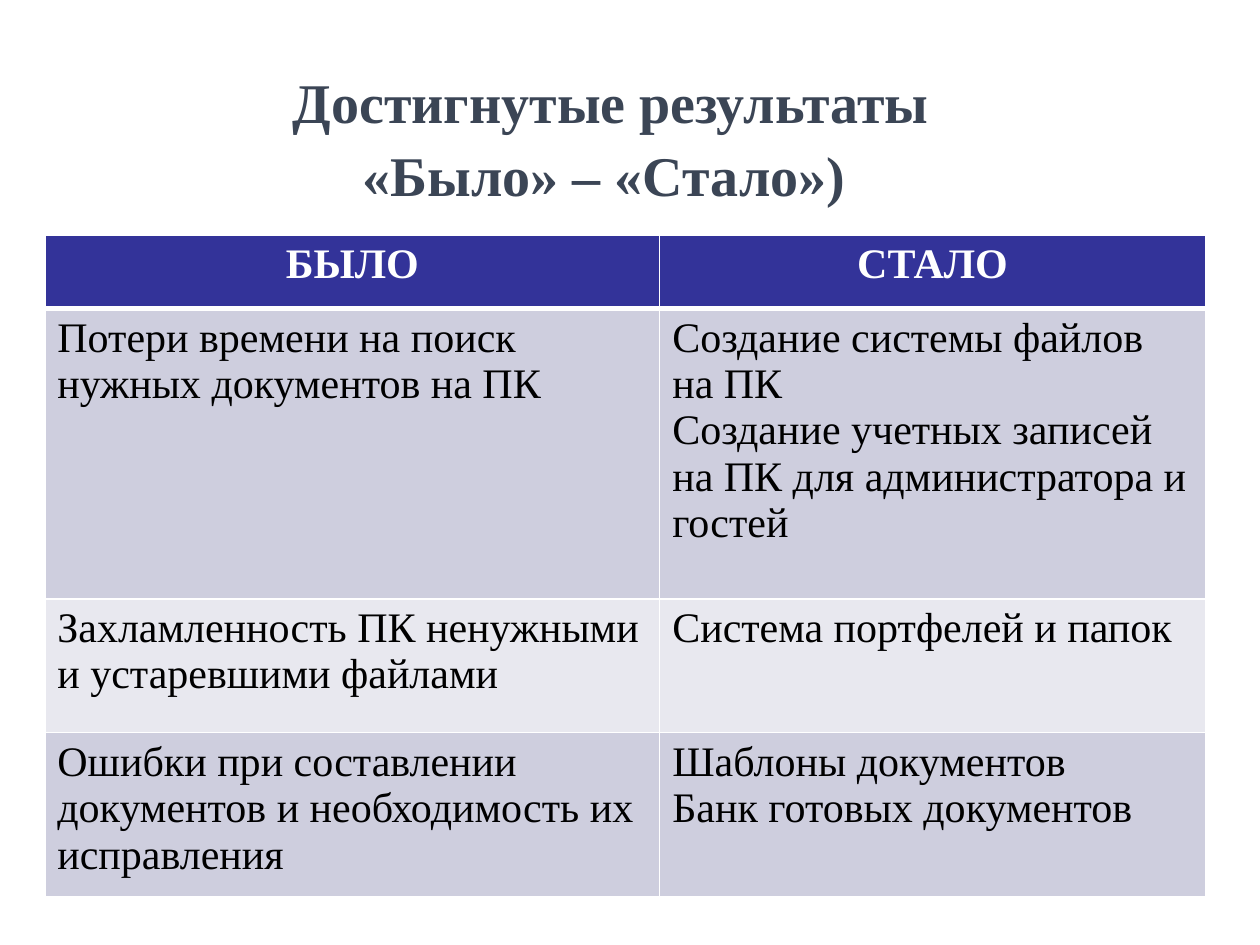
from lxml.etree import SubElement
from pptx import Presentation
from pptx.dml.color import RGBColor
from pptx.enum.text import PP_ALIGN as Align
from pptx.oxml.ns import qn
from pptx.util import Pt

FONT = "Times New Roman"
COLORS = {
    "title": "3B4555",
    "header": "333399",
    "band_dark": "CECEDE",
    "band_light": "E8E8EF",
    "text": "000000",
    "white": "FFFFFF",
}
TITLE_LINES = ["Достигнутые результаты", "«Было» – «Стало») "]
COLUMN_WIDTHS = [351.4, 311.8]
ROW_HEIGHTS = [42, 166, 76.5, 86]
# Each cell is a list of paragraphs.
ROWS = [
    [["БЫЛО"], ["СТАЛО"]],
    [["Потери времени на поиск нужных документов на ПК"],
     ["Создание системы файлов на ПК",
      "Создание учетных записей на ПК для администратора и гостей"]],
    [["Захламленность ПК ненужными и устаревшими файлами"],
     ["Система портфелей и папок"]],
    [["Ошибки при составлении документов и необходимость их исправления"],
     ["Шаблоны документов", "Банк готовых документов"]],
]


def color(name):
    return RGBColor.from_string(COLORS[name])


def add_span(para, text, size, color_name, bold):
    span = para.add_run()
    span.text = text
    span.font.name = FONT
    span.font.size = Pt(size)
    span.font.bold = bold
    span.font.color.rgb = color(color_name)


def add_title(page):
    box = page.shapes.add_textbox(Pt(158.4), Pt(31.7), Pt(381.6), Pt(90.7))
    box.text_frame.word_wrap = True
    para = box.text_frame.paragraphs[0]
    para.alignment = Align.CENTER
    para.line_spacing = 1.09
    for index, line in enumerate(TITLE_LINES):
        if index:
            para.add_line_break()
        add_span(para, line, 32, "title", True)


def set_borders(cell, widths):
    """Draw white borders; widths maps the side letters L, R, T, B to points."""
    props = cell._tc.get_or_add_tcPr()
    for index, (side, width) in enumerate(widths.items()):
        line = SubElement(props, qn(f"a:ln{side}"), w=str(Pt(width)))
        fill = SubElement(line, qn("a:solidFill"))
        SubElement(fill, qn("a:srgbClr"), val=COLORS["white"])
        props.insert(index, line)


def fill_cell(cell, texts, row_index):
    is_header = row_index == 0
    band = "band_dark" if row_index % 2 else "band_light"
    cell.fill.solid()
    cell.fill.fore_color.rgb = color("header" if is_header else band)
    set_borders(cell, {
        "L": 1,
        "R": 1,
        "T": 3 if row_index == 1 else 1,
        "B": 3 if is_header else 1,
    })
    frame = cell.text_frame
    for index, text in enumerate(texts):
        para = frame.add_paragraph() if index else frame.paragraphs[0]
        para.alignment = Align.CENTER if is_header else Align.LEFT
        add_span(para, text, 24, "white" if is_header else "text", is_header)


def add_results_table(page):
    table = page.shapes.add_table(
        len(ROWS), len(COLUMN_WIDTHS), Pt(25.6), Pt(134.2),
        Pt(sum(COLUMN_WIDTHS)), Pt(sum(ROW_HEIGHTS))).table
    for column, width in zip(table.columns, COLUMN_WIDTHS):
        column.width = Pt(width)
    for row_index, (row, height) in enumerate(zip(table.rows, ROW_HEIGHTS)):
        row.height = Pt(height)
        for cell, texts in zip(row.cells, ROWS[row_index]):
            fill_cell(cell, texts, row_index)


def main():
    deck = Presentation()
    deck.slide_width, deck.slide_height = Pt(720), Pt(540)
    page = deck.slides.add_slide(deck.slide_layouts[6])
    add_title(page)
    add_results_table(page)
    deck.save("out.pptx")


if __name__ == "__main__":
    main()
